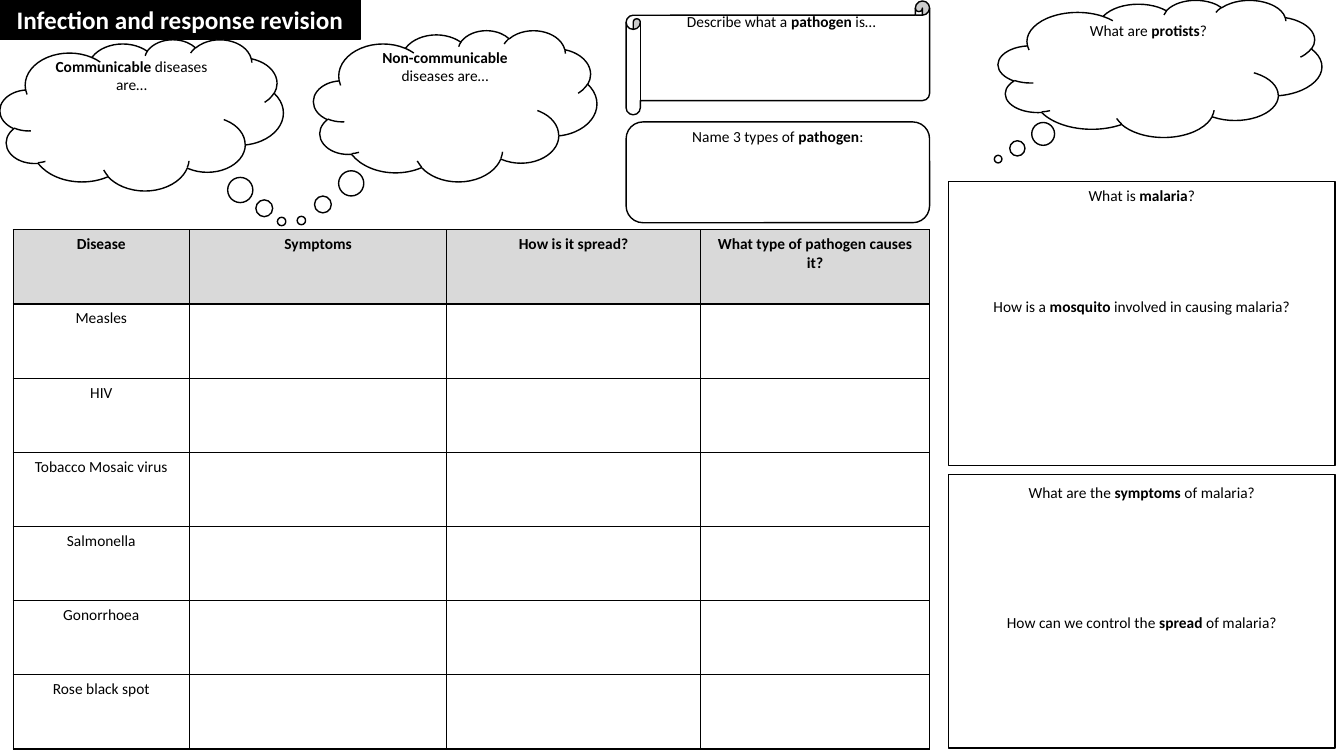
from lxml import etree
from pptx import Presentation
from pptx.dml.color import RGBColor
from pptx.enum import shapes, text
from pptx.oxml.ns import qn
from pptx.util import Inches, Pt

BLACK = RGBColor(0, 0, 0)
WHITE = RGBColor(255, 255, 255)
GREY = RGBColor(0xD9, 0xD9, 0xD9)
FONT = "Calibri"


def write(p, content, size=11, color=BLACK):
    """Fill a centred paragraph; parts between asterisks are bold."""
    p.alignment = text.PP_ALIGN.CENTER
    for i, part in enumerate(content.split("*")):
        if part:
            r = p.add_run()
            r.text = part
            r.font.name, r.font.size, r.font.bold = FONT, Pt(size), i % 2 == 1
            r.font.color.rgb = color


def outline(sp, fill):
    sp.fill.solid()
    sp.fill.fore_color.rgb = fill
    sp.line.color.rgb = BLACK
    sp.line.width = Pt(1)


prs = Presentation()
prs.slide_width, prs.slide_height = Inches(13.33), Inches(7.5)
s = prs.slides.add_slide(prs.slide_layouts[5])

title = s.shapes.title
title.left, title.top = Inches(0), Inches(0)
title.width, title.height = Inches(3.57), Inches(0.39)
outline(title, BLACK)
title.text_frame.vertical_anchor = text.MSO_ANCHOR.MIDDLE
write(title.text_frame.paragraphs[0], "*Infection and response revision*", 18, WHITE)

# Question shapes: kind, box, adjustments, top inset, gap between questions (pt), questions
CLOUD = shapes.MSO_SHAPE.CLOUD_CALLOUT
SCROLL = shapes.MSO_SHAPE.HORIZONTAL_SCROLL
ROUNDED = shapes.MSO_SHAPE.ROUNDED_RECTANGLE
RECT = shapes.MSO_SHAPE.RECTANGLE
questions = [
    (CLOUD, (0, 0.39, 2.81, 1.5), (0.494, 0.705), -0.05, 0,
     ["*Communicable* diseases are…"]),
    (CLOUD, (3.11, 0.3, 2.81, 1.5), (-0.543, 0.759), -0.05, 0,
     ["*Non-communicable* diseases are…"]),
    (SCROLL, (6.21, 0.01, 3.01, 1.13), (), -0.03, 0,
     ["Describe what a *pathogen* is…"]),
    (ROUNDED, (6.21, 1.21, 3.01, 1), (), 0, 0,
     ["Name 3 types of *pathogen*:"]),
    (CLOUD, (9.9, 0, 3.21, 1.36), (-0.5, 0.661), 0, 0,
     ["What are *protists*?"]),
    (RECT, (9.41, 1.8, 3.83, 2.82), (), 0.05, 66,
     ["What is *malaria*?", "How is a *mosquito* involved in causing malaria?"]),
    (RECT, (9.41, 4.71, 3.83, 2.71), (), 0.08, 80,
     ["What are the *symptoms* of malaria?", "How can we control the *spread* of malaria?"]),
]
for kind, box, adjustments, inset, gap, lines in questions:
    sp = s.shapes.add_shape(kind, *map(Inches, box))
    sp.shadow.inherit = False
    outline(sp, WHITE)
    for i, value in enumerate(adjustments):
        sp.adjustments[i] = value
    tf = sp.text_frame
    tf.word_wrap = True
    tf.vertical_anchor = text.MSO_ANCHOR.TOP
    tf.margin_top = Inches(inset)
    for i, line in enumerate(lines):
        p = tf.add_paragraph() if i else tf.paragraphs[0]
        if i:
            p.space_before = Pt(gap)
        write(p, line)

headings = ["Disease", "Symptoms", "How is it spread?", "What type of pathogen causes it?"]
diseases = ["Measles", "HIV", "Tobacco Mosaic virus", "Salmonella", "Gonorrhoea", "Rose black spot"]
widths = [1.75, 2.55, 2.52, 2.27]
row_height = 0.736
row_count = len(diseases) + 1
table = s.shapes.add_table(row_count, len(widths), Inches(0.13), Inches(2.28),
                           Inches(sum(widths)), Inches(row_height * row_count)).table
table.first_row = table.horz_banding = False
for column, width in zip(table.columns, widths):
    column.width = Inches(width)
for row in table.rows:
    row.height = Inches(row_height)
for cell in table.iter_cells():
    tcPr = cell._tc.get_or_add_tcPr()
    for side in ("a:lnL", "a:lnR", "a:lnT", "a:lnB"):
        ln = etree.SubElement(tcPr, qn(side), w=str(Pt(1)))
        fill = etree.SubElement(ln, qn("a:solidFill"))
        etree.SubElement(fill, qn("a:srgbClr"), val=str(BLACK))
    cell.fill.background()
for col, heading in enumerate(headings):
    cell = table.cell(0, col)
    cell.fill.solid()
    cell.fill.fore_color.rgb = GREY
    write(cell.text_frame.paragraphs[0], f"*{heading}*")
for row, disease in enumerate(diseases, 1):
    write(table.cell(row, 0).text_frame.paragraphs[0], disease)

prs.save("out.pptx")
